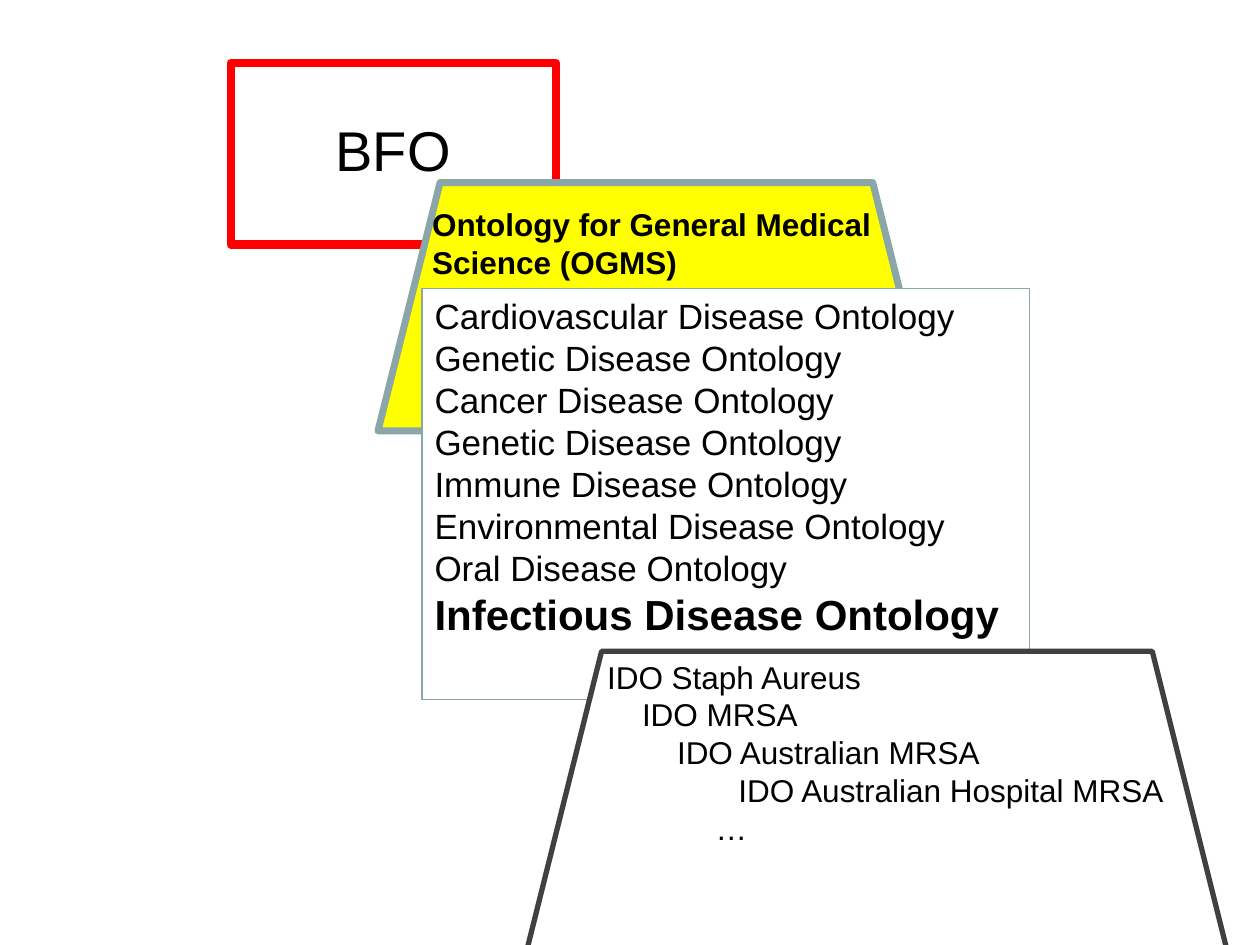
import pptx
import pptx.util
import pptx.dml.color
import pptx.enum.shapes
import pptx.enum.text

Pt = pptx.util.Pt
RGBColor = pptx.dml.color.RGBColor
SHAPE = pptx.enum.shapes.MSO_SHAPE
ANCHOR = pptx.enum.text.MSO_ANCHOR
ALIGN = pptx.enum.text.PP_ALIGN

COLORS = {
    "red": "FF0000",
    "yellow": "FFFF00",
    "sage": "8AA6A8",
    "gray": "404040",
    "white": "FFFFFF",
    "black": "000000",
}
DISEASES = ["Cardiovascular", "Genetic", "Cancer", "Genetic", "Immune", "Environmental", "Oral"]
DISEASE_LINES = [(f"{name} Disease Ontology", 0, {"size": Pt(20)}) for name in DISEASES]
DISEASE_LINES.append(("Infectious Disease Ontology", 0, {"size": Pt(24), "bold": True}))
OGMS_LINES = [("Ontology for General Medical Science (OGMS)", 0, {"size": Pt(18), "bold": True})]
STAPH_LINES = [
    (text, indent, {"size": Pt(18)})
    for text, indent in [
        ("IDO Staph Aureus", 10),
        ("IDO MRSA", 30),
        ("IDO Australian MRSA", 50),
        ("IDO Australian Hospital MRSA", 85),
        ("…", 72),
    ]
]

LAYERS = [
    {"kind": SHAPE.RECTANGLE, "box": (131.8, 36, 185.8, 103.7), "line": ("red", 4.75),
     "lines": [("BFO", 0, {"size": Pt(32)})], "align": ALIGN.CENTER,
     "frame": {"vertical_anchor": ANCHOR.MIDDLE, "margin_bottom": Pt(9)}},
    {"kind": SHAPE.TRAPEZOID, "box": (216, 104.4, 318.2, 141.8), "fill": "yellow", "line": ("sage", 4)},
    {"box": (239.8, 113.8, 282.2, 72.7), "lines": OGMS_LINES},
    {"kind": SHAPE.RECTANGLE, "box": (241.2, 164.9, 347, 234.7), "fill": "white",
     "line": ("sage", 0.75), "lines": DISEASE_LINES},
    {"kind": SHAPE.TRAPEZOID, "box": (300.2, 372.2, 401.8, 174.2), "fill": "white", "line": ("gray", 3)},
    {"box": (329.8, 372.2, 345.6, 116.6), "lines": STAPH_LINES},
]


def color(name):
    return RGBColor.from_string(COLORS[name])


def set_attributes(target, values):
    for attribute, value in values.items():
        setattr(target, attribute, value)


def add_layer(slide, layer):
    box = [Pt(value) for value in layer["box"]]
    if "kind" not in layer:
        return slide.shapes.add_textbox(*box)
    shape = slide.shapes.add_shape(layer["kind"], *box)
    shape.shadow.inherit = False
    if "fill" in layer:
        shape.fill.solid()
        shape.fill.fore_color.rgb = color(layer["fill"])
    else:
        shape.fill.background()
    line_color, line_width = layer["line"]
    shape.line.color.rgb = color(line_color)
    shape.line.width = Pt(line_width)
    return shape


def write_lines(shape, layer):
    frame = shape.text_frame
    frame_format = {"word_wrap": True, "vertical_anchor": ANCHOR.TOP}
    set_attributes(frame, {**frame_format, **layer.get("frame", {})})
    for index, (text, indent, font_format) in enumerate(layer["lines"]):
        paragraph = frame.add_paragraph() if index else frame.paragraphs[0]
        paragraph.alignment = layer.get("align", ALIGN.LEFT)
        if indent:
            paragraph._p.get_or_add_pPr().set("marL", str(Pt(indent)))
        run = paragraph.add_run()
        run.text = text
        run.font.color.rgb = color("black")
        set_attributes(run.font, {"name": "Arial", **font_format})


def main():
    presentation = pptx.Presentation()
    presentation.slide_width = Pt(720)
    presentation.slide_height = Pt(540)
    slide = presentation.slides.add_slide(presentation.slide_layouts[6])
    for layer in LAYERS:
        shape = add_layer(slide, layer)
        if "lines" in layer:
            write_lines(shape, layer)
    presentation.save("out.pptx")


if __name__ == "__main__":
    main()
